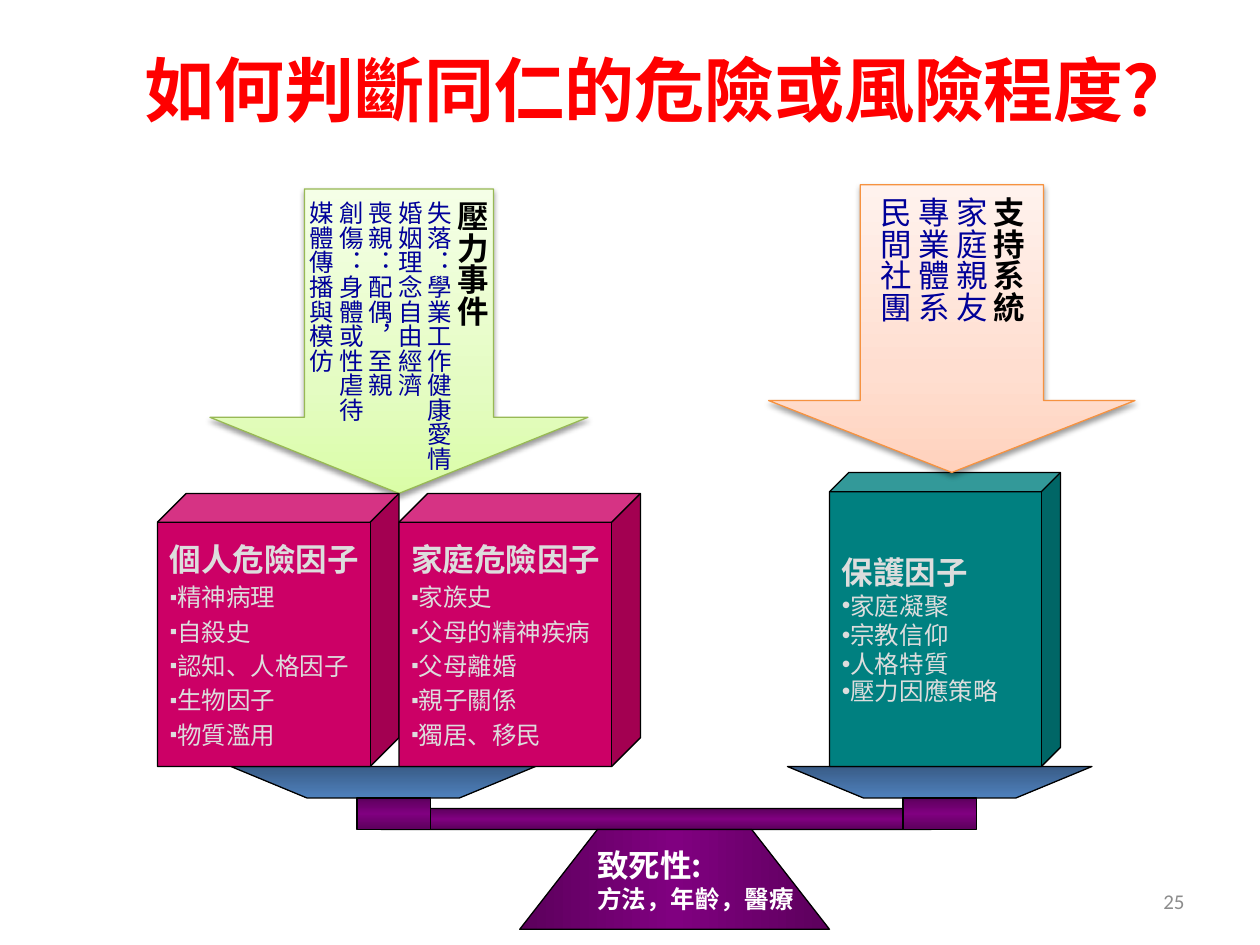
from lxml import etree
from pptx import Presentation
from pptx.dml.color import RGBColor
from pptx.enum.shapes import MSO_SHAPE
from pptx.enum.text import MSO_ANCHOR, PP_ALIGN
from pptx.oxml.ns import qn
from pptx.util import Inches, Pt

RECT = MSO_SHAPE.RECTANGLE
ROUND = MSO_SHAPE.ROUNDED_RECTANGLE
CUBE = MSO_SHAPE.CUBE
ARROW = MSO_SHAPE.DOWN_ARROW
MIDDLE = MSO_ANCHOR.MIDDLE
LEFT, CENTER, RIGHT = PP_ALIGN.LEFT, PP_ALIGN.CENTER, PP_ALIGN.RIGHT

WIDE, HIGH = Inches(10), Inches(7.5)
COLS, ROWS = 120, 90
UNIT = WIDE // COLS

HUES = {
    "title": "FF0000", "page": "8C8C8C", "edge": "000000", "head": "000000",
    "item": "000099", "pale": "DDDDDD", "white": "FFFFFF",
    "risk": "CC0066", "guard": "008080", "lime": "98B955", "peach": "F69240",
}
FADES = {
    "tray": [(0, "395C87"), (100, "4F81BD")],
    "beam": [(0, "5C005C"), (50, "800080"), (100, "5C005C")],
    "lime": [(0, "DAFDA7"), (35, "E4FCC2"), (100, "F5FFE7")],
    "peach": [(0, "FFD2BD"), (35, "FFDED0"), (100, "FFF2ED")],
}


def color(name):
    return RGBColor.from_string(HUES[name])


def node(parent, tag, **attrs):
    return etree.SubElement(parent, qn(tag), {k: str(v) for k, v in attrs.items()})


def place(col, row, wide, high):
    return (round(col * WIDE / COLS), round(row * HIGH / ROWS),
            round(wide * WIDE / COLS), round(high * HIGH / ROWS))


def fade(shape, name, angle):
    shape.fill.gradient()
    grad = shape.fill._xPr.find(qn("a:gradFill"))
    for child in list(grad):
        grad.remove(child)
    stops = node(grad, "a:gsLst")
    for spot, tint in FADES[name]:
        stop = node(stops, "a:gs", pos=spot * 1000)
        node(stop, "a:srgbClr", val=tint)
    node(grad, "a:lin", ang=angle * 60000, scaled=0)


def trim(shape, edge="edge"):
    shape.shadow.inherit = False
    shape.line.color.rgb = color(edge)
    shape.line.width = Pt(0.75)


def solid(slide, kind, box, adjust=()):
    shape = slide.shapes.add_shape(kind, *place(*box))
    for i, value in enumerate(adjust):
        shape.adjustments[i] = value
    trim(shape)
    return shape


def outline(slide, col, row, points, name, angle):
    (x, y), *rest = [((col + dx) * UNIT, (row + dy) * UNIT) for dx, dy in points]
    pen = slide.shapes.build_freeform(round(x), round(y))
    pen.add_line_segments([(round(a), round(b)) for a, b in rest], close=True)
    shape = pen.convert_to_shape()
    trim(shape)
    fade(shape, name, angle)
    return shape


def cast(shape):
    effects = shape._element.spPr.find(qn("a:effectLst"))
    shade = node(effects, "a:outerShdw", blurRad=Pt(3.1), dist=Pt(1.6),
                 dir=5400000, rotWithShape=0)
    tint = node(shade, "a:srgbClr", val=HUES["edge"])
    node(tint, "a:alpha", val=38000)


def mark(para, sign, size):
    props = para._p.get_or_add_pPr()
    if size:
        node(props, "a:buSzPct", val=size * 1000)
    node(props, "a:buFont", typeface="Arial")
    node(props, "a:buChar", char=sign)


def write(shape, lines, frame=None):
    text = shape.text_frame
    settings = {"word_wrap": True, "vertical_anchor": MIDDLE} | (frame or {})
    for key, value in settings.items():
        setattr(text, key, value)
    for i, (words, look) in enumerate(lines):
        para = text.paragraphs[0] if i == 0 else text.add_paragraph()
        para.alignment = LEFT
        for key, value in look.get("para", {}).items():
            setattr(para, key, value)
        if "mark" in look:
            mark(para, *look["mark"])
        run = para.add_run()
        run.text = words
        for key, value in look["font"].items():
            setattr(run.font, key, value)
        run.font.color.rgb = color(look["hue"])
        node(run._r.get_or_add_rPr(), "a:ea", typeface=look.get("east", "Karla"))


def style(size, hue, bold=False, name="Noto Sans CJK SC", **more):
    return {"font": {"size": Pt(size), "bold": bold, "name": name}, "hue": hue} | more


def label(slide, box, words, look):
    write(slide.shapes.add_textbox(*place(*box)), [(words, look)])


def block(slide, box, depth, fill, head, items, look, name="Noto Sans CJK SC"):
    shape = solid(slide, CUBE, box, [depth])
    shape.fill.solid()
    shape.fill.fore_color.rgb = color(fill)
    lines = [(head, style(18, "pale", True, name))] + [(item, look) for item in items]
    if fill == "guard":
        lines[-1] = (items[-1], look | {"para": {"line_spacing": 0.9}})
    write(shape, lines, {"margin_right": 0})


def push(slide, box, name, head, items, size, face):
    shape = solid(slide, ARROW, box, [0.5, 0.25])
    trim(shape, name)
    fade(shape, name, 270)
    cast(shape)
    lines = [(head, style(18, "head", True, face))]
    lines += [(item, style(size, "item", False, face)) for item in items]
    write(shape, lines, {"word_wrap": False})
    shape.text_frame._txBody.bodyPr.set("vert", "eaVert")


def scale(slide):
    for col in (22, 75):
        outline(slide, col, 73, [(0, 0), (7.25, 3), (21.75, 3), (29, 0)], "tray", 90)
    fade(solid(slide, ROUND, (36, 77, 53, 2), [0.167]), "beam", 90)
    for col in (34, 86):
        fade(solid(slide, RECT, (col, 76, 7, 3)), "beam", 90)
    base = outline(slide, 49.5, 79, [(0, 9.5), (7.4, 0), (22.1, 0), (29.5, 9.5)], "beam", 0)
    write(base, [("致死性:", style(18, "white", True)),
                 ("方法，年齡，醫療", style(14, "white", True))],
          {"margin_left": round(7.4 * UNIT), "margin_right": 0})


def main():
    deck = Presentation()
    deck.slide_width, deck.slide_height = WIDE, HIGH
    slide = deck.slides.add_slide(deck.slide_layouts[6])

    label(slide, (86, 83.4, 28, 4.8), "25",
          style(12, "page", False, "Calibri", para={"alignment": RIGHT}))
    label(slide, (11, 3.4, 105.5, 10), "如何判斷同仁的危險或風險程度？",
          style(40, "title", True, "Calibri", para={"alignment": CENTER}, east="Calibri"))
    scale(slide)

    push(slide, (20, 18, 36, 29), "lime", "壓力事件",
         ["失落：學業工作健康愛情", "婚姻理念自由經濟", "喪親：配偶，至親",
          "創傷：身體或性虐待", "媒體傳播與模仿"], 14, "Noto Sans CJK SC")

    gap = {"para": {"space_before": Pt(2.8)}, "mark": ("▪", 85)}
    block(slide, (15, 47, 23, 26), 0.119, "risk", "個人危險因子",
          ["精神病理", "自殺史", "認知、人格因子", "生物因子", "物質濫用"],
          style(14, "pale", name="Arial", **gap), "Calibri")
    block(slide, (79, 45, 22, 28), 0.083, "guard", "保護因子",
          ["家庭凝聚", "宗教信仰", "人格特質", "壓力因應策略"],
          style(14, "pale", mark=("•", None)))
    block(slide, (38, 47, 23, 26), 0.119, "risk", "家庭危險因子",
          ["家族史", "父母的精神疾病", "父母離婚", "親子關係", "獨居、移民"],
          style(14, "pale", **gap))

    push(slide, (73.2, 17.6, 34.9, 27.4), "peach", "支持系統",
         ["家庭親友", "專業體系", "民間社團"], 18, "Karla")
    deck.save("out.pptx")


if __name__ == "__main__":
    main()
